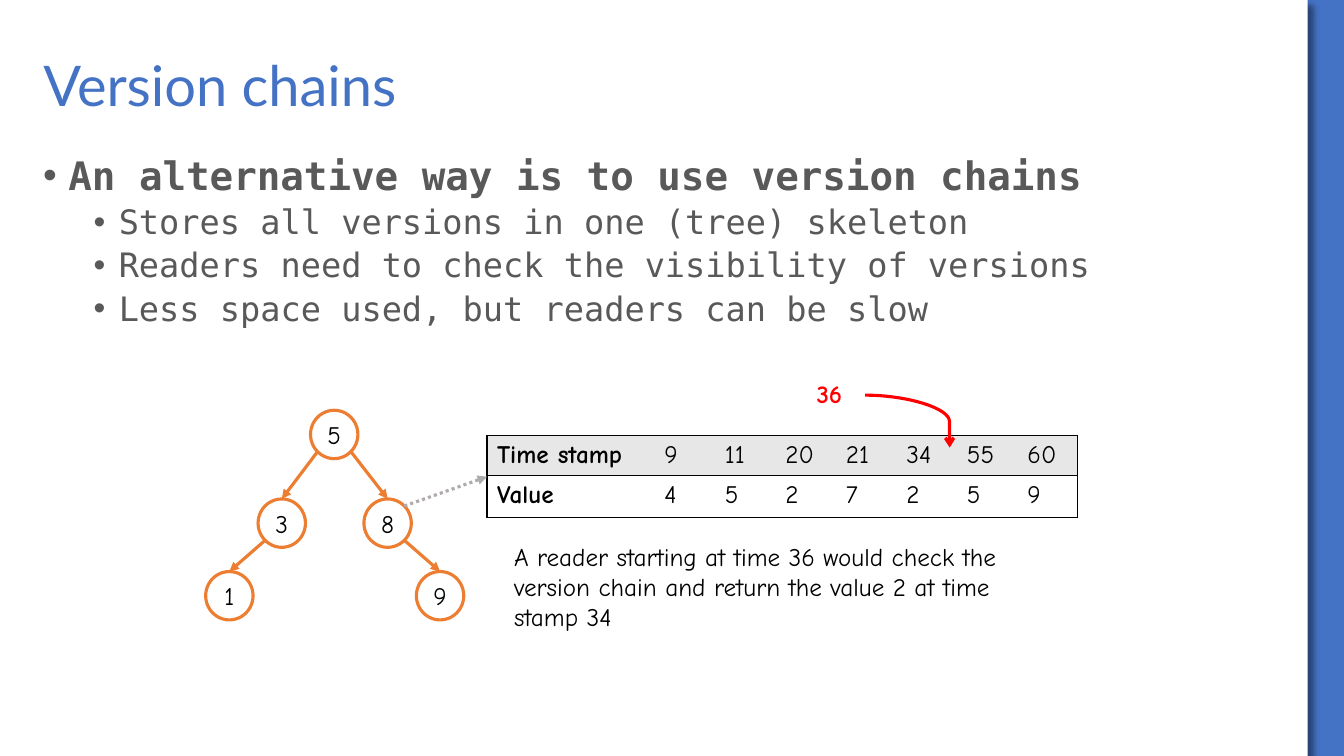
from dataclasses import dataclass

from lxml.etree import SubElement
from pptx import Presentation
from pptx.dml.color import RGBColor
from pptx.enum.dml import MSO_LINE
from pptx.enum.shapes import MSO_CONNECTOR, MSO_SHAPE
from pptx.enum.text import MSO_ANCHOR, MSO_AUTO_SIZE, PP_ALIGN
from pptx.oxml.ns import qn
from pptx.shapes.autoshape import Shape
from pptx.shapes.connector import Connector
from pptx.slide import Slide
from pptx.table import _Cell
from pptx.text.text import _Paragraph
from pptx.util import Emu, Pt

EMU_PER_PX = 9144
BLUE = RGBColor(0x44, 0x72, 0xC4)
WHITE = RGBColor(0xFF, 0xFF, 0xFF)
BLACK = RGBColor(0x00, 0x00, 0x00)
DARK_GREY = RGBColor(0x59, 0x59, 0x59)
MID_GREY = RGBColor(0xAF, 0xAB, 0xAB)
LIGHT_GREY = RGBColor(0xE7, 0xE7, 0xE7)
ORANGE = RGBColor(0xED, 0x7D, 0x31)
RED = RGBColor(0xFF, 0x00, 0x00)

TITLE_FONT = "Lato"
BODY_FONT = "DejaVu Sans Mono"
FIGURE_FONT = "Comic Neue"

NODE_WIDTH, NODE_HEIGHT, NODE_INSET = 47, 48, 7
Point = tuple[int, int]


@dataclass(frozen=True)
class Bullet:
    text: str
    level: int
    size: int
    space_before: int


@dataclass(frozen=True)
class Node:
    key: str
    left: int
    top: int
    parent: str = ""


BULLETS = [
    Bullet("An alternative way is to use version chains", 0, 28, 0),
    Bullet("Stores all versions in one (tree) skeleton", 1, 24, 5),
    Bullet("Readers need to check the visibility of versions", 1, 24, 5),
    Bullet("Less space used, but readers can be slow", 1, 24, 5),
]
NODES = [
    Node("5", 308, 407),
    Node("3", 256, 495, "5"),
    Node("8", 361, 495, "5"),
    Node("1", 204, 567, "3"),
    Node("9", 413, 567, "8"),
]
VERSION_ROWS = [
    ["Time stamp", "9", "11", "20", "21", "34", "55", "60"],
    ["Value", "4", "5", "2", "7", "2", "5", "9"],
]


def px(length: int) -> Emu:
    return Emu(length * EMU_PER_PX)


def write(paragraph: _Paragraph, text: str, *, font: str = FIGURE_FONT, size: int = 18,
          color: RGBColor = BLACK, bold: bool = False,
          align: PP_ALIGN = PP_ALIGN.LEFT) -> None:
    paragraph.alignment = align
    run = paragraph.add_run()
    run.text = text
    run.font.name = font
    run.font.size = Pt(size)
    run.font.color.rgb = color
    run.font.bold = bold


def add_text_box(slide: Slide, left: int, top: int, width: int, height: int,
                 wrap: bool = True) -> Shape:
    box = slide.shapes.add_textbox(px(left), px(top), px(width), px(height))
    box.text_frame.word_wrap = wrap
    return box


def add_panel(slide: Slide) -> None:
    panel = slide.shapes.add_shape(MSO_SHAPE.RECTANGLE, 0, 0, px(1297), px(750))
    panel.fill.solid()
    panel.fill.fore_color.rgb = WHITE
    panel.line.fill.background()
    panel.shadow.inherit = False
    effects = panel._element.spPr.find(qn("a:effectLst"))
    shadow = SubElement(effects, qn("a:outerShdw"), blurRad=str(Pt(4)), dist=str(Pt(6)),
                        dir=str(45 * 60000), algn="tl", rotWithShape="0")
    color = SubElement(shadow, qn("a:srgbClr"), val=str(BLACK))
    SubElement(color, qn("a:alpha"), val="40000")
    slide.shapes.title._element.addprevious(panel._element)


def set_title(slide: Slide, text: str) -> None:
    title = slide.shapes.title
    title.left, title.top, title.width, title.height = px(33), px(50), px(1233), px(75)
    frame = title.text_frame
    frame.auto_size = MSO_AUTO_SIZE.NONE
    frame.vertical_anchor = MSO_ANCHOR.MIDDLE
    frame.paragraphs[0].line_spacing = 0.9
    write(frame.paragraphs[0], text, font=TITLE_FONT, size=40, color=BLUE)


def add_bullets(slide: Slide) -> None:
    frame = add_text_box(slide, 33, 150, 1233, 575).text_frame
    for index, bullet in enumerate(BULLETS):
        paragraph = frame.add_paragraph() if index else frame.paragraphs[0]
        paragraph.level = bullet.level
        paragraph.line_spacing = 0.9
        paragraph.space_before = Pt(bullet.space_before)
        properties = paragraph._p.get_or_add_pPr()
        properties.set("marL", str(px(25 + 50 * bullet.level)))
        properties.set("indent", str(px(-25)))
        SubElement(properties, qn("a:buFont"), typeface="Arial")
        SubElement(properties, qn("a:buChar"), char="•")
        write(paragraph, bullet.text, font=BODY_FONT, size=bullet.size,
              color=DARK_GREY, bold=bullet.level == 0)


def add_arrow(slide: Slide, start: Point, end: Point, color: RGBColor,
              kind: MSO_CONNECTOR = MSO_CONNECTOR.STRAIGHT, head: str = "triangle",
              dash: MSO_LINE | None = None) -> Connector:
    arrow = slide.shapes.add_connector(kind, *map(px, start + end))
    arrow.line.color.rgb = color
    arrow.line.width = Pt(2.25)
    if dash is not None:
        arrow.line.dash_style = dash
    properties = arrow._element.spPr
    SubElement(properties.find(qn("a:ln")), qn("a:tailEnd"), type=head)
    SubElement(properties, qn("a:effectLst"))
    return arrow


def add_node(slide: Slide, node: Node) -> Shape:
    circle = slide.shapes.add_shape(MSO_SHAPE.OVAL, px(node.left), px(node.top),
                                    px(NODE_WIDTH), px(NODE_HEIGHT))
    circle.shadow.inherit = False
    circle.fill.solid()
    circle.fill.fore_color.rgb = WHITE
    circle.line.color.rgb = ORANGE
    circle.line.width = Pt(2.25)
    frame = circle.text_frame
    frame.margin_left = frame.margin_right = px(8)
    frame.margin_top = frame.margin_bottom = px(4)
    frame.vertical_anchor = MSO_ANCHOR.MIDDLE
    write(frame.paragraphs[0], node.key, align=PP_ALIGN.CENTER)
    return circle


def add_tree(slide: Slide) -> None:
    nodes = {node.key: node for node in NODES}
    for node in NODES:
        circle = add_node(slide, node)
        if node.parent:
            parent = nodes[node.parent]
            inset = NODE_INSET if node.left < parent.left else NODE_WIDTH - NODE_INSET
            start = (parent.left + inset, parent.top + NODE_HEIGHT - NODE_INSET)
            edge = add_arrow(slide, start, (node.left, node.top), ORANGE)
            edge.end_connect(circle, 0)


def set_borders(cell: _Cell, visible: dict[str, bool]) -> None:
    properties = cell._tc.get_or_add_tcPr()
    for side, shown in visible.items():
        border = SubElement(properties, qn(f"a:ln{side}"), w=str(Pt(1) if shown else 0))
        if shown:
            fill = SubElement(border, qn("a:solidFill"))
            SubElement(fill, qn("a:srgbClr"), val=str(BLACK))
        else:
            SubElement(border, qn("a:noFill"))


def add_version_table(slide: Slide) -> None:
    last = len(VERSION_ROWS[0]) - 1
    table = slide.shapes.add_table(2, last + 1, px(483), px(432), px(583), px(81)).table
    for index, column in enumerate(table.columns):
        column.width = px(60 if index else 166)
    for row, values, height, color in zip(table.rows, VERSION_ROWS, (40, 41),
                                          (LIGHT_GREY, WHITE)):
        row.height = px(height)
        for index, (cell, value) in enumerate(zip(row.cells, values)):
            set_borders(cell, {"L": index == 0, "R": index == last, "T": True, "B": True})
            cell.fill.solid()
            cell.fill.fore_color.rgb = color
            write(cell.text_frame.paragraphs[0], value, bold=index == 0)


def add_reader(slide: Slide) -> None:
    note = add_text_box(slide, 500, 532, 533, 101)
    write(note.text_frame.paragraphs[0], "A reader starting at time 36 would check the "
          "version chain and return the value 2 at time stamp 34")
    add_arrow(slide, (401, 502), (483, 473), MID_GREY, dash=MSO_LINE.ROUND_DOT)
    time = add_text_box(slide, 800, 370, 51, 40, wrap=False)
    write(time.text_frame.paragraphs[0], "36", color=RED, bold=True)
    pointer = add_arrow(slide, (858, 392), (942, 444), RED, MSO_CONNECTOR.CURVE, "arrow")
    adjustments = pointer._element.spPr.find(qn("a:prstGeom")).get_or_add_avLst()
    SubElement(adjustments, qn("a:gd"), name="adj1", fmla="val 99700")


def main() -> None:
    presentation = Presentation()
    presentation.slide_width, presentation.slide_height = px(1333), px(750)
    slide = presentation.slides.add_slide(presentation.slide_layouts[5])
    slide.background.fill.solid()
    slide.background.fill.fore_color.rgb = BLUE
    add_panel(slide)
    set_title(slide, "Version chains")
    add_bullets(slide)
    add_tree(slide)
    add_version_table(slide)
    add_reader(slide)
    presentation.save("out.pptx")


if __name__ == "__main__":
    main()
